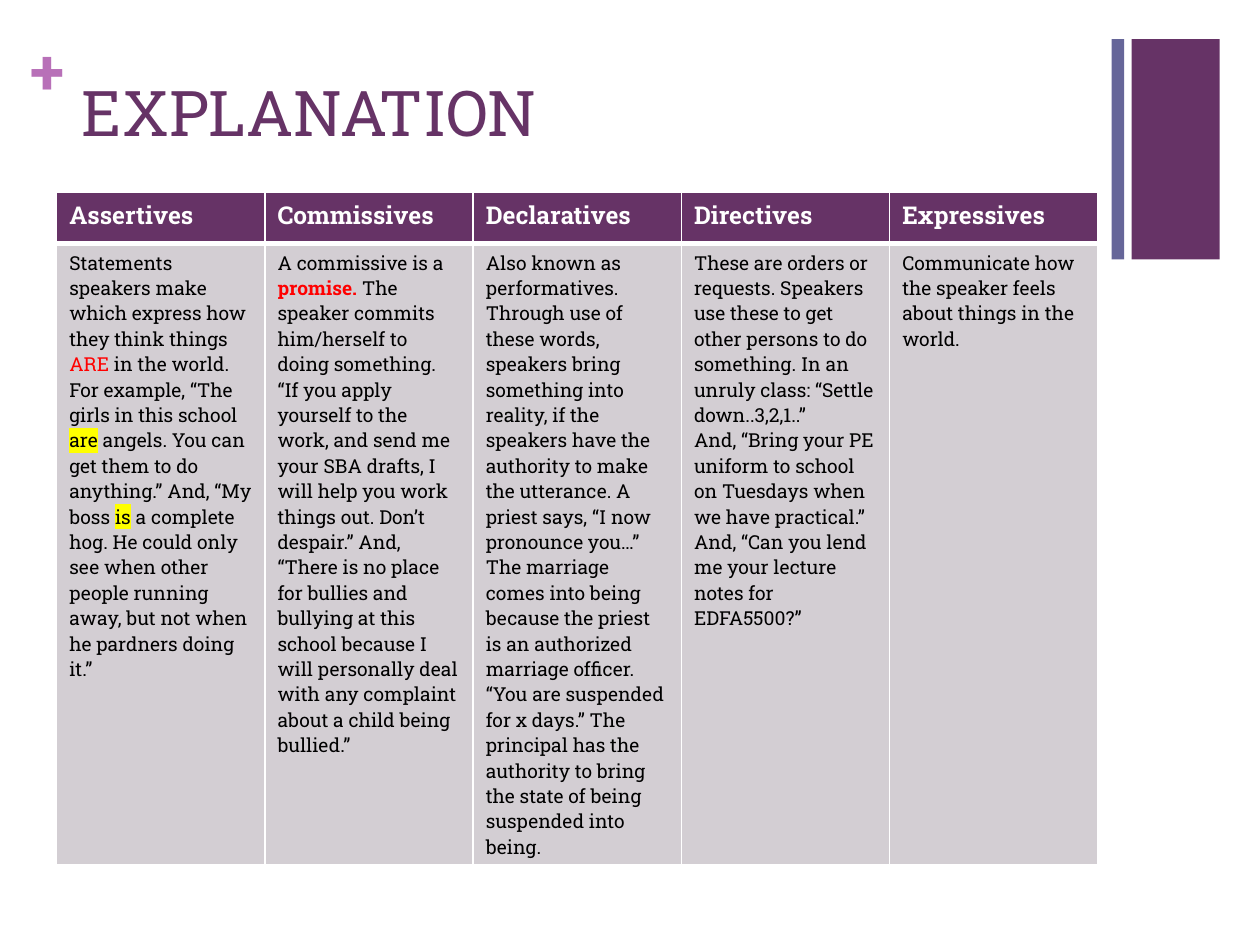
from dataclasses import dataclass

from lxml import etree
from pptx import Presentation, util as u
from pptx.dml.color import RGBColor
from pptx.enum import shapes, text
from pptx.oxml.ns import qn

FONT = "Roboto Slab"
HEADER_HEIGHT = 29.2
BODY_HEIGHT = 355
COLORS = {
    "purple": "663366",
    "blue": "666699",
    "orchid": "B870B8",
    "cell": "D3CED3",
    "white": "FFFFFF",
    "black": "000000",
    "red": "FF0000",
    "yellow": "FFFF00",
}


@dataclass(frozen=True)
class Run:
    words: str
    color: str = "black"
    bold: bool = False
    highlight: str | None = None


@dataclass(frozen=True)
class Bar:
    left: float
    width: float
    color: str


@dataclass(frozen=True)
class Column:
    heading: str
    paragraphs: list[list[Run]]


BARS = [Bar(646.6, 50.4, "purple"), Bar(635.2, 7.2, "blue")]
COLUMNS = [
    Column("Assertives", [[
        Run("Statements speakers make which express how they think things "),
        Run("ARE", "red"),
        Run(" in the world. For example, “The girls in this school "),
        Run("are", highlight="yellow"),
        Run(" angels. You can get them to do anything.” And, “My boss "),
        Run("is", highlight="yellow"),
        Run(" a complete hog. He could only see when other people running away, "
            "but not when he pardners doing it.”"),
    ]]),
    Column("Commissives", [[
        Run("A commissive is a "),
        Run("promise. ", "red", True),
        Run("The speaker commits him/herself to doing something. “If you apply yourself "
            "to the work, and send me your SBA drafts, I will help you work things out. "
            "Don’t despair.” And, “There is no place for bullies and bullying at this "
            "school because I will personally deal with any complaint about a child "
            "being bullied.”"),
    ]]),
    Column("Declaratives", [[
        Run("Also known as performatives. Through use of these words, speakers bring "
            "something into reality, if the speakers have the authority to make the "
            "utterance. A priest says, “I now pronounce you…” The marriage comes into "
            "being because the priest is an authorized marriage officer. “You are "
            "suspended for x days.” The principal has the authority to bring the state "
            "of being suspended into being."),
    ]]),
    Column("Directives", [
        [Run("These are orders or requests. Speakers use these to get other persons to do "
             "something. In an unruly class: “Settle down..3,2,1..”")],
        [Run("And, “Bring your PE uniform to school on Tuesdays when we have practical.”")],
        [Run("And, “Can you lend me your lecture notes for EDFA5500?”")],
    ]),
    Column("Expressives", [
        [Run("Communicate how the speaker feels about things in the world.")],
    ]),
]


def rgb(color: str) -> RGBColor:
    return RGBColor.from_string(COLORS[color])


def add_run(paragraph, run: Run, size: float) -> None:
    piece = paragraph.add_run()
    piece.text = run.words
    font = piece.font
    font.name, font.size, font.bold = FONT, u.Pt(size), run.bold
    font.color.rgb = rgb(run.color)
    if run.highlight:
        highlight = etree.Element(qn("a:highlight"))
        etree.SubElement(highlight, qn("a:srgbClr"), val=COLORS[run.highlight])
        piece._r.rPr.find(qn("a:solidFill")).addnext(highlight)


def add_bar(slide, bar: Bar) -> None:
    shape = slide.shapes.add_shape(
        shapes.MSO_SHAPE.RECTANGLE, u.Pt(bar.left), u.Pt(22.3), u.Pt(bar.width), u.Pt(126))
    shape.shadow.inherit = False
    shape.fill.solid()
    shape.fill.fore_color.rgb = rgb(bar.color)
    shape.line.fill.background()


def add_plus(slide) -> None:
    shape = slide.shapes.add_textbox(u.Pt(17.3), u.Pt(18), u.Pt(20.9), u.Pt(43.9))
    frame = shape.text_frame
    frame.word_wrap = True
    frame.margin_left = frame.margin_top = frame.margin_right = frame.margin_bottom = 0
    add_run(frame.paragraphs[0], Run("+", "orchid", True), 36)


def set_title(slide) -> None:
    title = slide.shapes.title
    title.left, title.top = u.Pt(39.6), u.Pt(38.2)
    title.width, title.height = u.Pt(594.7), u.Pt(87.8)
    frame = title.text_frame
    frame.vertical_anchor = text.MSO_ANCHOR.TOP
    frame.auto_size = text.MSO_AUTO_SIZE.NONE
    paragraph = frame.paragraphs[0]
    paragraph.alignment = text.PP_ALIGN.LEFT
    add_run(paragraph, Run("EXPLANATION", "purple"), 36)


def fill_cell(cell, paragraphs: list[list[Run]], size: float, color: str, bottom: float) -> None:
    properties = cell._tc.get_or_add_tcPr()
    for side, width in (("L", 1), ("R", 1), ("T", 1), ("B", bottom)):
        line = etree.SubElement(properties, qn(f"a:ln{side}"), w=str(u.Pt(width)))
        fill = etree.SubElement(line, qn("a:solidFill"))
        etree.SubElement(fill, qn("a:srgbClr"), val=COLORS["white"])
    cell.fill.solid()
    cell.fill.fore_color.rgb = rgb(color)
    frame = cell.text_frame
    for index, runs in enumerate(paragraphs):
        paragraph = frame.add_paragraph() if index else frame.paragraphs[0]
        for run in runs:
            add_run(paragraph, run, size)


def add_speech_act_table(slide) -> None:
    table = slide.shapes.add_table(
        2, len(COLUMNS), u.Pt(32.4), u.Pt(110), u.Pt(595),
        u.Pt(HEADER_HEIGHT + BODY_HEIGHT)).table
    table.rows[0].height = u.Pt(HEADER_HEIGHT)
    table.rows[1].height = u.Pt(BODY_HEIGHT)
    for index, column in enumerate(COLUMNS):
        heading = [[Run(column.heading, "white", True)]]
        fill_cell(table.cell(0, index), heading, 14, "purple", 3)
        fill_cell(table.cell(1, index), column.paragraphs, 11, "cell", 1)


def main() -> None:
    presentation = Presentation()
    presentation.slide_width, presentation.slide_height = u.Pt(720), u.Pt(540)
    slide = presentation.slides.add_slide(presentation.slide_layouts[5])
    for bar in BARS:
        add_bar(slide, bar)
    add_plus(slide)
    set_title(slide)
    add_speech_act_table(slide)
    presentation.save("out.pptx")


if __name__ == "__main__":
    main()
